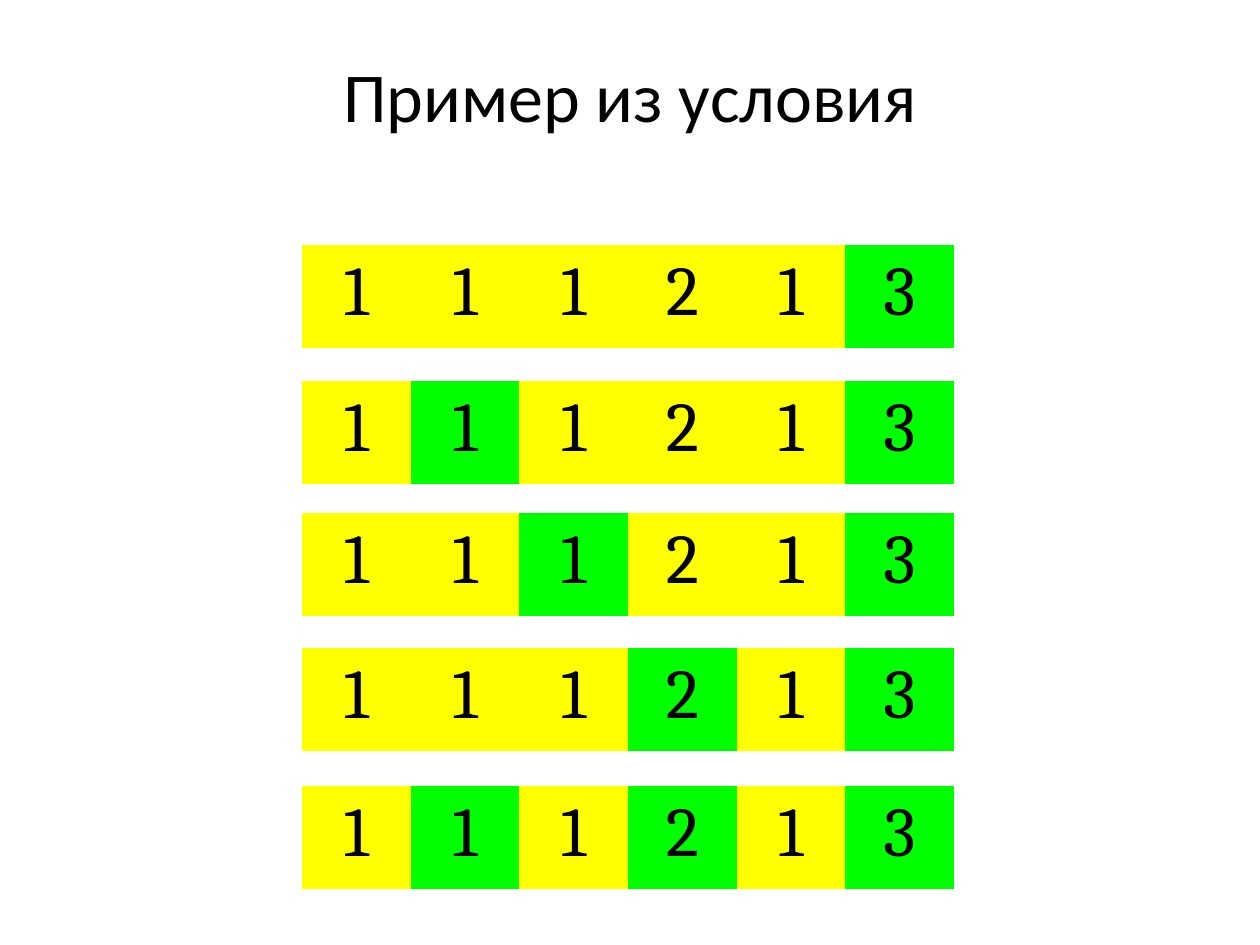
from dataclasses import dataclass

from lxml import etree
from pptx import Presentation
from pptx.dml.color import RGBColor
from pptx.enum.text import MSO_ANCHOR, PP_ALIGN
from pptx.oxml.ns import qn
from pptx.util import Pt

CENTER = PP_ALIGN.CENTER
MIDDLE = MSO_ANCHOR.MIDDLE
EMU_PER_PX = 914400 / 126
BLANK_LAYOUT = 6
BORDER_EMU = 360

SLIDE_WIDTH, SLIDE_HEIGHT = 1260, 945
TITLE_HEIGHT = 195
ROW_LEFT, ROW_WIDTH, ROW_HEIGHT = 302, 652, 103
NUMBERS = (1, 1, 1, 2, 1, 3)
STEPS = (
    (245, {5}),
    (381, {1, 5}),
    (513, {2, 5}),
    (648, {3, 5}),
    (786, {1, 3, 5}),
)


@dataclass(frozen=True)
class Theme:
    text: str = "000000"
    border: str = "000000"
    plain: str = "FFFF00"
    selected: str = "00FF00"
    title_font: str = "Calibri"
    number_font: str = "Cambria"
    size: int = 40


THEME = Theme()


def px(length):
    return round(length * EMU_PER_PX)


def set_attributes(target, values):
    for name, value in values.items():
        setattr(target, name, value)


def write_text(text_frame, text, font_name):
    paragraph = text_frame.paragraphs[0]
    set_attributes(paragraph, {"alignment": CENTER, "line_spacing": 0.98})
    run = paragraph.add_run()
    run.text = text
    set_attributes(run.font, {"name": font_name, "size": Pt(THEME.size)})
    run.font.color.rgb = RGBColor.from_string(THEME.text)


def add_title(slide, text):
    shape = slide.shapes.add_textbox(0, 0, px(SLIDE_WIDTH), px(TITLE_HEIGHT))
    set_attributes(shape.text_frame, {
        "word_wrap": True,
        "vertical_anchor": MIDDLE,
        "margin_left": px(11),
        "margin_right": px(11),
        "margin_top": px(6),
        "margin_bottom": px(5),
    })
    write_text(shape.text_frame, text, THEME.title_font)


def add_borders(cell):
    properties = cell._tc.get_or_add_tcPr()
    for side in ("a:lnL", "a:lnR", "a:lnT", "a:lnB"):
        line = etree.SubElement(properties, qn(side), w=str(BORDER_EMU))
        fill = etree.SubElement(line, qn("a:solidFill"))
        etree.SubElement(fill, qn("a:srgbClr"), val=THEME.border)


def format_cell(cell, text, color):
    set_attributes(cell, {
        "margin_left": px(11),
        "margin_right": px(11),
        "margin_top": px(8),
        "margin_bottom": px(6),
    })
    add_borders(cell)
    cell.fill.solid()
    cell.fill.fore_color.rgb = RGBColor.from_string(color)
    write_text(cell.text_frame, text, THEME.number_font)


def add_number_row(slide, top, selected):
    table = slide.shapes.add_table(
        1, len(NUMBERS), px(ROW_LEFT), px(top), px(ROW_WIDTH), px(ROW_HEIGHT)
    ).table
    set_attributes(table, {"first_row": False, "horz_banding": False})
    for column, number in enumerate(NUMBERS):
        color = THEME.selected if column in selected else THEME.plain
        format_cell(table.cell(0, column), str(number), color)


def main():
    presentation = Presentation()
    set_attributes(presentation, {
        "slide_width": px(SLIDE_WIDTH),
        "slide_height": px(SLIDE_HEIGHT),
    })
    slide = presentation.slides.add_slide(presentation.slide_layouts[BLANK_LAYOUT])
    for top, selected in STEPS:
        add_number_row(slide, top, selected)
    add_title(slide, "Пример из условия")
    presentation.save("out.pptx")


if __name__ == "__main__":
    main()
